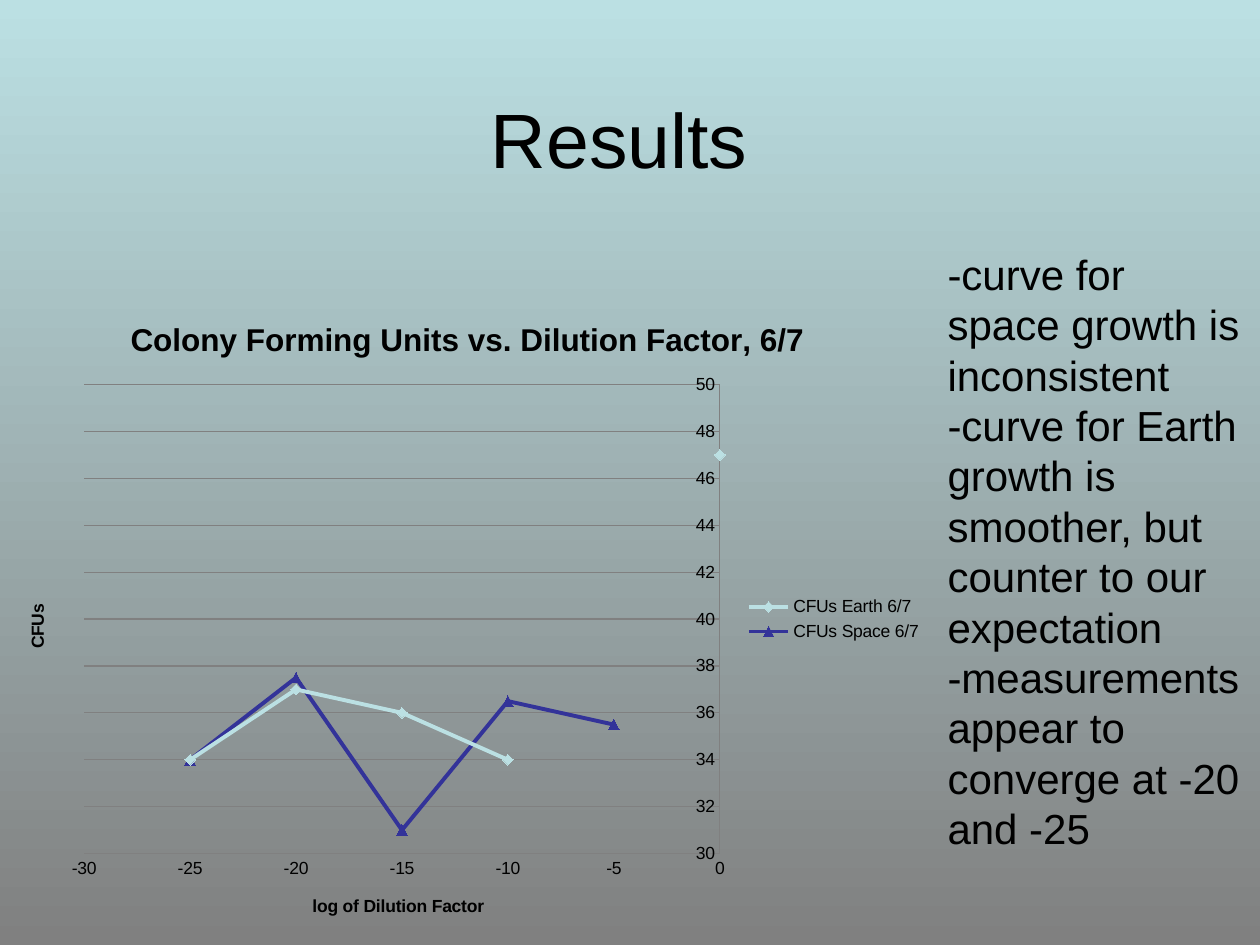
from lxml import etree
from pptx import Presentation
from pptx.chart.data import XyChartData
from pptx.dml.color import RGBColor
from pptx.enum.chart import (XL_CHART_TYPE, XL_LEGEND_POSITION, XL_MARKER_STYLE,
                             XL_TICK_LABEL_POSITION, XL_TICK_MARK)
from pptx.enum.text import MSO_ANCHOR, MSO_AUTO_SIZE, PP_ALIGN
from pptx.oxml.ns import qn
from pptx.util import Inches, Pt

# Content
TITLE = "Results"
FINDINGS = [
    "-curve for space growth is inconsistent",
    "-curve for Earth growth is smoother, but counter to our expectation",
    "-measurements appear to converge at -20 and -25",
]
CHART_TITLE = "Colony Forming Units vs. Dilution Factor, 6/7"
X_TITLE, Y_TITLE = "log of Dilution Factor", "CFUs"
LOG_DILUTIONS = [0, -5, -10, -15, -20, -25]

# Look
FONT = "Arial"
BLACK = RGBColor(0x00, 0x00, 0x00)
GRAY = RGBColor(0x80, 0x80, 0x80)
PALE_BLUE = RGBColor(0xBB, 0xE0, 0xE3)
NAVY = RGBColor(0x33, 0x33, 0x99)
SERIES = [  # name, counts, colour, marker
    ("CFUs Earth 6/7", [47, None, 34, 36, 37, 34], PALE_BLUE, XL_MARKER_STYLE.DIAMOND),
    ("CFUs Space 6/7", [None, 35.5, 36.5, 31, 37.5, 34], NAVY, XL_MARKER_STYLE.TRIANGLE),
]
PLOT_AREA = {"x": 0.09, "y": 0.14, "w": 0.68, "h": 0.72}  # fractions of the chart


def style_font(font, size, bold=False):
    font.name, font.size, font.bold = FONT, Pt(size), bold
    font.color.rgb = BLACK


def fill_placeholder(sp, box, lines, size, align, anchor):
    sp.left, sp.top, sp.width, sp.height = (Inches(v) for v in box)
    tf = sp.text_frame
    tf.text = "\n".join(lines)
    tf.word_wrap = True
    tf.auto_size = MSO_AUTO_SIZE.NONE
    tf.vertical_anchor = anchor
    for p in tf.paragraphs:
        p.alignment = align
        p.space_before = Pt(0)
        pPr = p._p.get_or_add_pPr()
        pPr.set("marL", "0")
        pPr.set("indent", "0")
        etree.SubElement(pPr, qn("a:buNone"))
        for r in p.runs:
            style_font(r.font, size)


def set_title(owner, text, size):
    tf = (owner.chart_title if hasattr(owner, "chart_title") else owner.axis_title).text_frame
    tf.text = text
    style_font(tf.paragraphs[0].runs[0].font, size, bold=True)


def style_axis(axis, title, low, high, step):
    axis.minimum_scale, axis.maximum_scale, axis.major_unit = low, high, step
    axis.major_tick_mark = axis.minor_tick_mark = XL_TICK_MARK.NONE
    axis.tick_label_position = XL_TICK_LABEL_POSITION.NEXT_TO_AXIS
    axis.tick_labels.number_format = "General"
    axis.tick_labels.number_format_is_linked = False
    axis.format.line.color.rgb = GRAY
    set_title(axis, title, 10)


prs = Presentation()
prs.slide_width, prs.slide_height = Inches(10), Inches(7.5)
slide = prs.slides.add_slide(prs.slide_layouts[1])

# Background
fill = slide.background.fill
fill.gradient()
fill.gradient_angle = 270
for stop, color, position in zip(fill.gradient_stops, (PALE_BLUE, GRAY), (0, 1)):
    stop.color.rgb, stop.position = color, position

# Title and findings
fill_placeholder(slide.shapes.title, (1.75, 0.67, 6.33, 0.84), [TITLE], 44,
                 PP_ALIGN.CENTER, MSO_ANCHOR.MIDDLE)
fill_placeholder(slide.placeholders[1], (7.42, 1.92, 2.58, 4.95), FINDINGS, 24,
                 PP_ALIGN.LEFT, MSO_ANCHOR.TOP)

# Chart
data = XyChartData()
for name, counts, _, _ in SERIES:
    series = data.add_series(name)
    for x, y in zip(LOG_DILUTIONS, counts):
        series.add_data_point(x, y)
chart = slide.shapes.add_chart(XL_CHART_TYPE.XY_SCATTER_SMOOTH, Inches(0), Inches(2.33),
                               Inches(7.42), Inches(5.17), data).chart
style_font(chart.font, 10)
set_title(chart, CHART_TITLE, 18)
chart.has_legend = True
chart.legend.position = XL_LEGEND_POSITION.RIGHT
chart.legend.include_in_layout = False
style_axis(chart.category_axis, X_TITLE, -30, 0, 5)
style_axis(chart.value_axis, Y_TITLE, 30, 50, 2)
chart.category_axis.has_major_gridlines = False
chart.value_axis.has_major_gridlines = True
chart.value_axis.major_gridlines.format.line.color.rgb = GRAY

# Series
plot = chart.plots[0]
plot.vary_by_categories = False
for series, (_, counts, color, style) in zip(plot.series, SERIES):
    series.smooth = True
    series.format.line.color.rgb = color
    series.format.line.width = Pt(2.25)
    marker = series.marker
    marker.style, marker.size = style, 6
    marker.format.fill.solid()
    marker.format.fill.fore_color.rgb = color
    marker.format.line.color.rgb = color
    # A missing count is a gap in the curve
    for pt in list(series._element.find(qn("c:yVal")).iter(qn("c:pt"))):
        if counts[int(pt.get("idx"))] is None:
            pt.getparent().remove(pt)

# Fixed plot area
plot_area = chart._chartSpace.chart.plotArea
for old in plot_area.findall(qn("c:layout")):
    plot_area.remove(old)
layout = etree.Element(qn("c:layout"))
manual = etree.SubElement(layout, qn("c:manualLayout"))
settings = {"layoutTarget": "inner", "xMode": "edge", "yMode": "edge", **PLOT_AREA}
for tag, value in settings.items():
    etree.SubElement(manual, qn("c:" + tag)).set("val", str(value))
plot_area.insert(0, layout)

prs.save("out.pptx")
